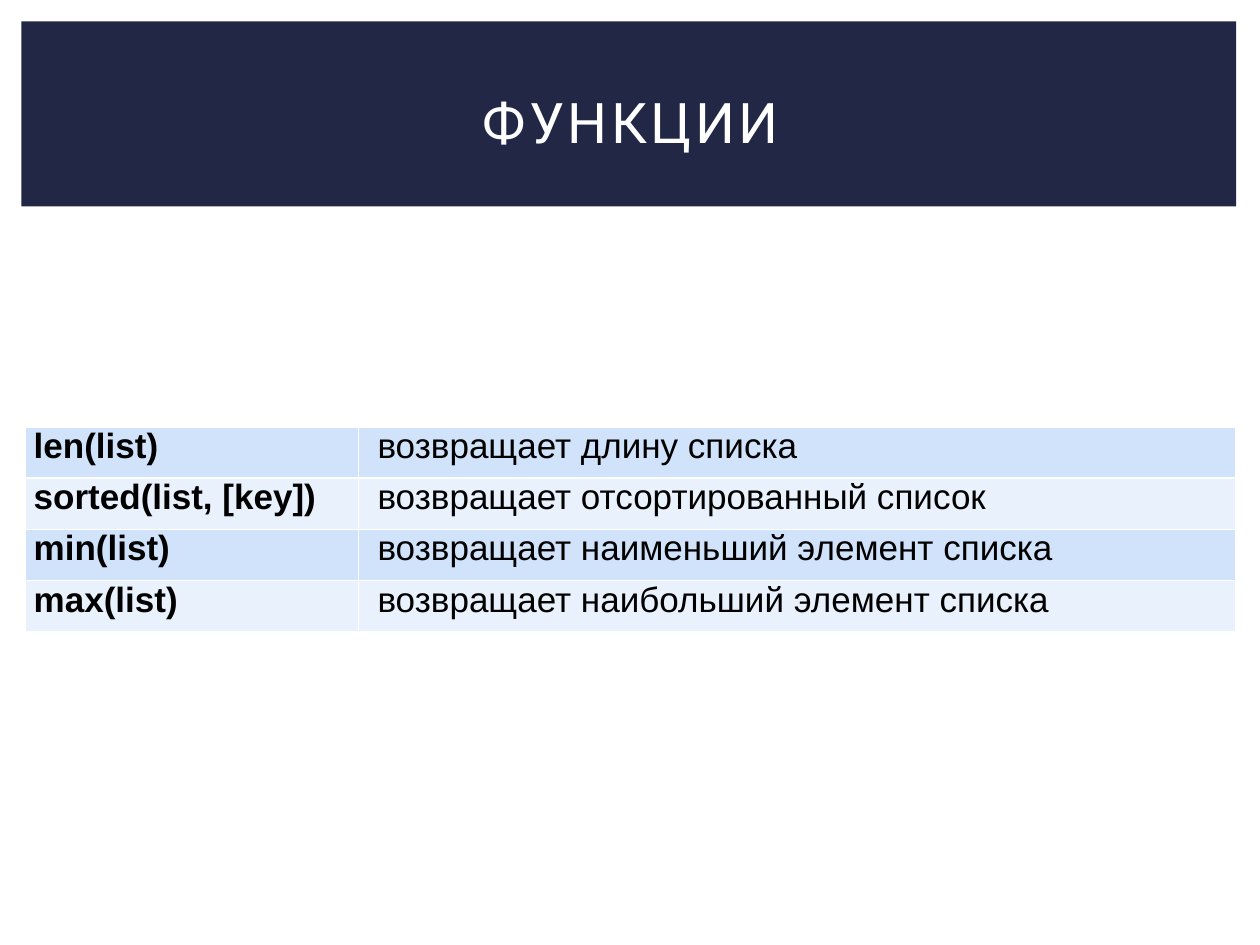
import lxml.etree
import pptx
import pptx.dml.color
import pptx.enum.shapes
import pptx.enum.text
import pptx.oxml.ns
import pptx.util

Cm = pptx.util.Cm
Pt = pptx.util.Pt
qn = pptx.oxml.ns.qn


def colour(hex_code):
    return pptx.dml.color.RGBColor.from_string(hex_code)


class SlideWriter:
    navy = "212745"
    white = "FFFFFF"
    black = "000000"
    stripes = ("D0E3FA", "E9F1FD")
    title_font = "Roboto"
    body_font = "Arial"

    def __init__(self, slide):
        self.slide = slide

    def band(self, left, top, width, height):
        band = self.slide.shapes.add_shape(
            pptx.enum.shapes.MSO_SHAPE.RECTANGLE,
            Cm(left), Cm(top), Cm(width), Cm(height))
        band.shadow.inherit = False
        band.fill.solid()
        band.fill.fore_color.rgb = colour(self.navy)
        band.line.fill.background()

    def run(self, paragraph, text, font, size, hex_code, bold=False):
        run = paragraph.add_run()
        run.text = text
        run.font.name = font
        run.font.size = Pt(size)
        run.font.bold = bold
        run.font.color.rgb = colour(hex_code)
        return run

    def title(self, text, left, top, width, height):
        frame = self.slide.shapes.add_textbox(
            Cm(left), Cm(top), Cm(width), Cm(height)).text_frame
        frame.word_wrap = True
        frame.vertical_anchor = pptx.enum.text.MSO_ANCHOR.MIDDLE
        heading = frame.paragraphs[0]
        heading.alignment = pptx.enum.text.PP_ALIGN.CENTER
        letters = self.run(heading, text, self.title_font, 32, self.white)
        letters.font._element.set("spc", "200")

    def borders(self, cell):
        properties = cell._tc.get_or_add_tcPr()
        for side in ("a:lnL", "a:lnR", "a:lnT", "a:lnB"):
            edge = lxml.etree.SubElement(properties, qn(side), w=str(Pt(1)))
            paint = lxml.etree.SubElement(edge, qn("a:solidFill"))
            lxml.etree.SubElement(paint, qn("a:srgbClr"), val=self.white)

    def cell(self, cell, text, fill, inset, bold):
        cell.margin_left = Cm(inset)
        cell.margin_right = Cm(0.18)
        cell.margin_top = cell.margin_bottom = Cm(0)
        self.borders(cell)
        cell.fill.solid()
        cell.fill.fore_color.rgb = colour(fill)
        self.run(cell.text_frame.paragraphs[0], text,
                 self.body_font, 20, self.black, bold)

    def table(self, entries, left, top, column_widths, row_height):
        table = self.slide.shapes.add_table(
            len(entries), len(column_widths), Cm(left), Cm(top),
            Cm(sum(column_widths)), Cm(row_height * len(entries))).table
        table.first_row = False
        table.horz_banding = False
        for column, width in zip(table.columns, column_widths):
            column.width = Cm(width)
        for index, (function, meaning) in enumerate(entries):
            fill = self.stripes[index % 2]
            table.rows[index].height = Cm(row_height)
            self.cell(table.cell(index, 0), function, fill, 0.18, True)
            self.cell(table.cell(index, 1), meaning, fill, 0.38, False)


def main():
    deck = pptx.Presentation()
    deck.slide_width = Cm(25.4)
    deck.slide_height = Cm(19.05)
    writer = SlideWriter(deck.slides.add_slide(deck.slide_layouts[6]))
    writer.band(0.43, 0.43, 24.49, 3.73)
    writer.title("ФУНКЦИИ", 1.07, 0.99, 23.29, 2.92)
    functions = [
        ("len(list)", "возвращает длину списка"),
        ("sorted(list, [key])", "возвращает отсортированный список"),
        ("min(list)", "возвращает наименьший элемент списка"),
        ("max(list)", "возвращает наибольший элемент списка"),
    ]
    writer.table(functions, 0.5, 8.61, (6.73, 17.68), 1.03)
    deck.save("out.pptx")


if __name__ == "__main__":
    main()
